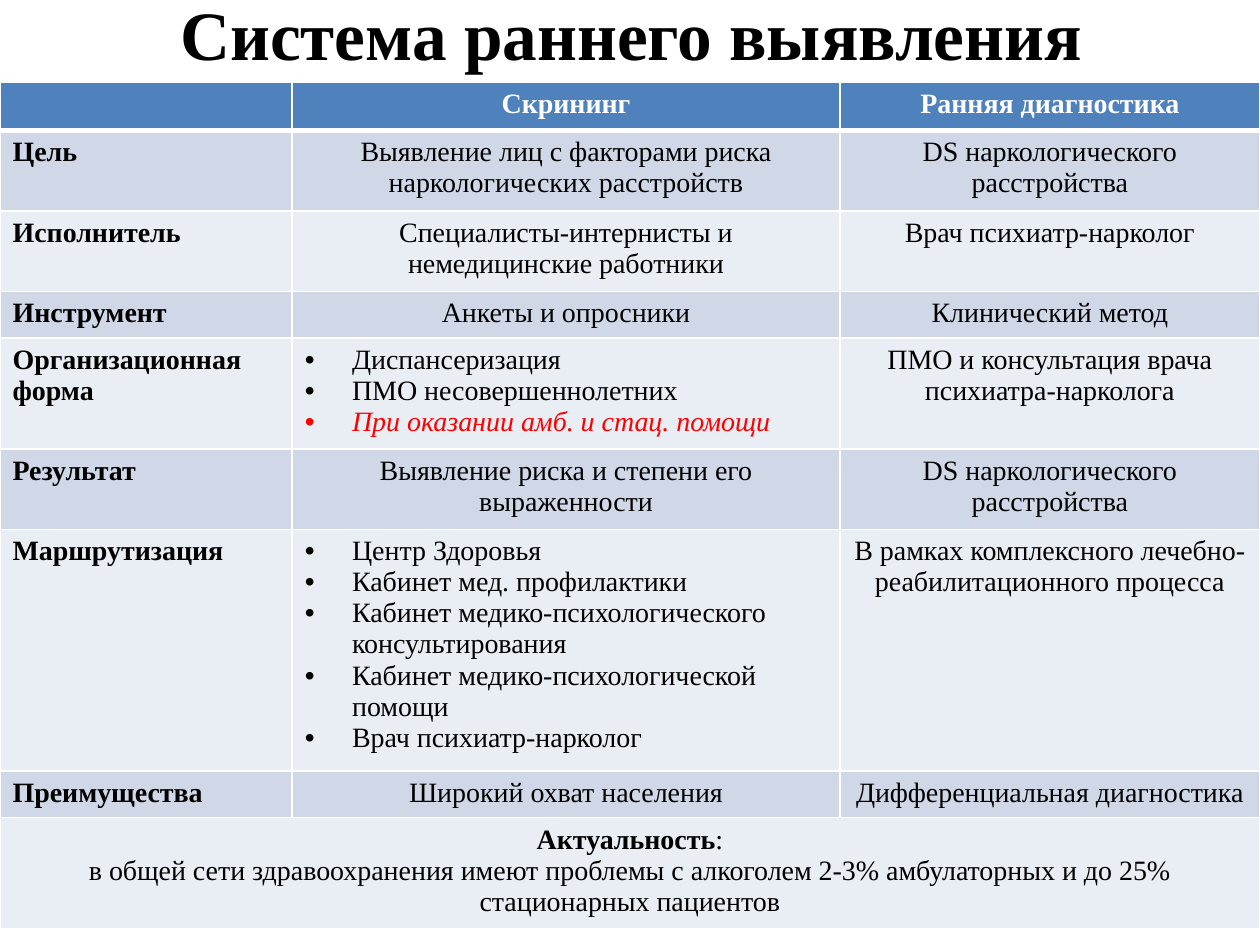
from dataclasses import dataclass

from lxml.etree import SubElement
from pptx import Presentation
from pptx.dml.color import RGBColor
from pptx.enum.text import MSO_ANCHOR, MSO_AUTO_SIZE, PP_ALIGN
from pptx.oxml import parse_xml
from pptx.oxml.ns import nsdecls, qn
from pptx.util import Pt


@dataclass(frozen=True)
class Theme:
    font: str = "Times New Roman"
    title_size: float = 39.6
    table_size: float = 16
    text: str = "000000"
    alert: str = "FF0000"
    white: str = "FFFFFF"
    header: str = "4F81BD"
    bands: tuple = ("E9EDF4", "D0D8E8")


theme = Theme()


def write(paragraph, text, size=theme.table_size, color=theme.text, bold=False,
          italic=False, align=PP_ALIGN.LEFT, bullet=False):
    """Append a formatted run to the paragraph, optionally making it a bullet."""
    run = paragraph.add_run()
    run.text = text
    run.font.name = theme.font
    run.font.size = Pt(size)
    run.font.bold = bold
    run.font.italic = italic
    run.font.color.rgb = RGBColor.from_string(color)
    paragraph.alignment = align
    if bullet:
        properties = paragraph._p.get_or_add_pPr()
        properties.set("marL", str(Pt(27)))
        properties.set("indent", str(-Pt(27)))
        SubElement(properties, qn("a:buFont")).set("typeface", "Arial")
        SubElement(properties, qn("a:buChar")).set("char", "•")


def fill_cell(cell, color, top=1, bottom=1):
    """Fill the cell and draw white borders; top and bottom are widths in points."""
    cell.fill.solid()
    cell.fill.fore_color.rgb = RGBColor.from_string(color)
    borders = (("lnL", 1), ("lnR", 1), ("lnT", top), ("lnB", bottom))
    for position, (side, width) in enumerate(borders):
        cell._tc.get_or_add_tcPr().insert(position, parse_xml(
            f'<a:{side} {nsdecls("a")} w="{Pt(width)}"><a:solidFill>'
            f'<a:srgbClr val="{theme.white}"/></a:solidFill></a:{side}>'))


alert_item = "При оказании амб. и стац. помощи"
headings = ("", "Скрининг", "Ранняя диагностика")
# Row height, criterion, screening (a list becomes bullets), early diagnostics
criteria = (
    (46, "Цель", "Выявление лиц с факторами риска наркологических расстройств",
     "DS наркологического расстройства"),
    (46, "Исполнитель", "Специалисты-интернисты и немедицинские работники",
     "Врач психиатр-нарколог"),
    (26.6, "Инструмент", "Анкеты и опросники", "Клинический метод"),
    (63.4, "Организационная форма",
     ["Диспансеризация", "ПМО несовершеннолетних", alert_item],
     "ПМО и консультация врача психиатра-нарколога"),
    (46, "Результат", "Выявление риска и степени его выраженности",
     "DS наркологического расстройства"),
    (138.2, "Маршрутизация",
     ["Центр Здоровья", "Кабинет мед. профилактики",
      "Кабинет медико-психологического консультирования",
      "Кабинет медико-психологической помощи", "Врач психиатр-нарколог"],
     "В рамках комплексного лечебно-реабилитационного процесса"),
    (26.6, "Преимущества", "Широкий охват населения",
     "Дифференциальная диагностика"),
)
column_widths = (167, 313, 240)
row_heights = (27.4, *(row[0] for row in criteria), 63.4)

presentation = Presentation()
presentation.slide_width, presentation.slide_height = Pt(720), Pt(540)
slide = presentation.slides.add_slide(presentation.slide_layouts[5])

title = slide.shapes.title
title.left, title.top, title.width, title.height = Pt(36.7), Pt(0), Pt(648), Pt(37.4)
title.text_frame.auto_size = MSO_AUTO_SIZE.NONE
title.text_frame.vertical_anchor = MSO_ANCHOR.MIDDLE
write(title.text_frame.paragraphs[0], "Система раннего выявления",
      size=theme.title_size, bold=True, align=PP_ALIGN.CENTER)

comparison = slide.shapes.add_table(
    len(row_heights), len(column_widths), Pt(0), Pt(47.2),
    Pt(sum(column_widths)), Pt(sum(row_heights))).table
for column, width in zip(comparison.columns, column_widths):
    column.width = Pt(width)
for row_index, (row, height) in enumerate(zip(comparison.rows, row_heights)):
    row.height = Pt(height)
    for cell in row.cells:
        fill_cell(cell, theme.bands[row_index % 2] if row_index else theme.header,
                  top=3 if row_index == 1 else 1,
                  bottom=3 if row_index == 0 else 1)

for cell, heading in zip(comparison.rows[0].cells, headings):
    write(cell.text_frame.paragraphs[0], heading, color=theme.white, bold=True,
          align=PP_ALIGN.CENTER)

for row_index, (_, criterion, screening, diagnostics) in enumerate(criteria, 1):
    criterion_cell, screening_cell, diagnostics_cell = comparison.rows[row_index].cells
    write(criterion_cell.text_frame.paragraphs[0], criterion, bold=True)
    write(diagnostics_cell.text_frame.paragraphs[0], diagnostics,
          align=PP_ALIGN.CENTER)
    screening_text = screening_cell.text_frame
    if isinstance(screening, str):
        write(screening_text.paragraphs[0], screening, align=PP_ALIGN.CENTER)
        continue
    for item_index, item in enumerate(screening):
        paragraph = (screening_text.add_paragraph() if item_index
                     else screening_text.paragraphs[0])
        alert = item == alert_item
        write(paragraph, item, color=theme.alert if alert else theme.text,
              italic=alert, bullet=True)

last_row = len(row_heights) - 1
relevance_cell = comparison.cell(last_row, 0)
relevance_cell.merge(comparison.cell(last_row, len(column_widths) - 1))
relevance = relevance_cell.text_frame
write(relevance.paragraphs[0], "Актуальность", bold=True, align=PP_ALIGN.CENTER)
write(relevance.paragraphs[0], ":", align=PP_ALIGN.CENTER)
write(relevance.add_paragraph(),
      "в общей сети здравоохранения имеют проблемы с алкоголем 2-3% "
      "амбулаторных и до 25% стационарных пациентов", align=PP_ALIGN.CENTER)

presentation.save("out.pptx")
